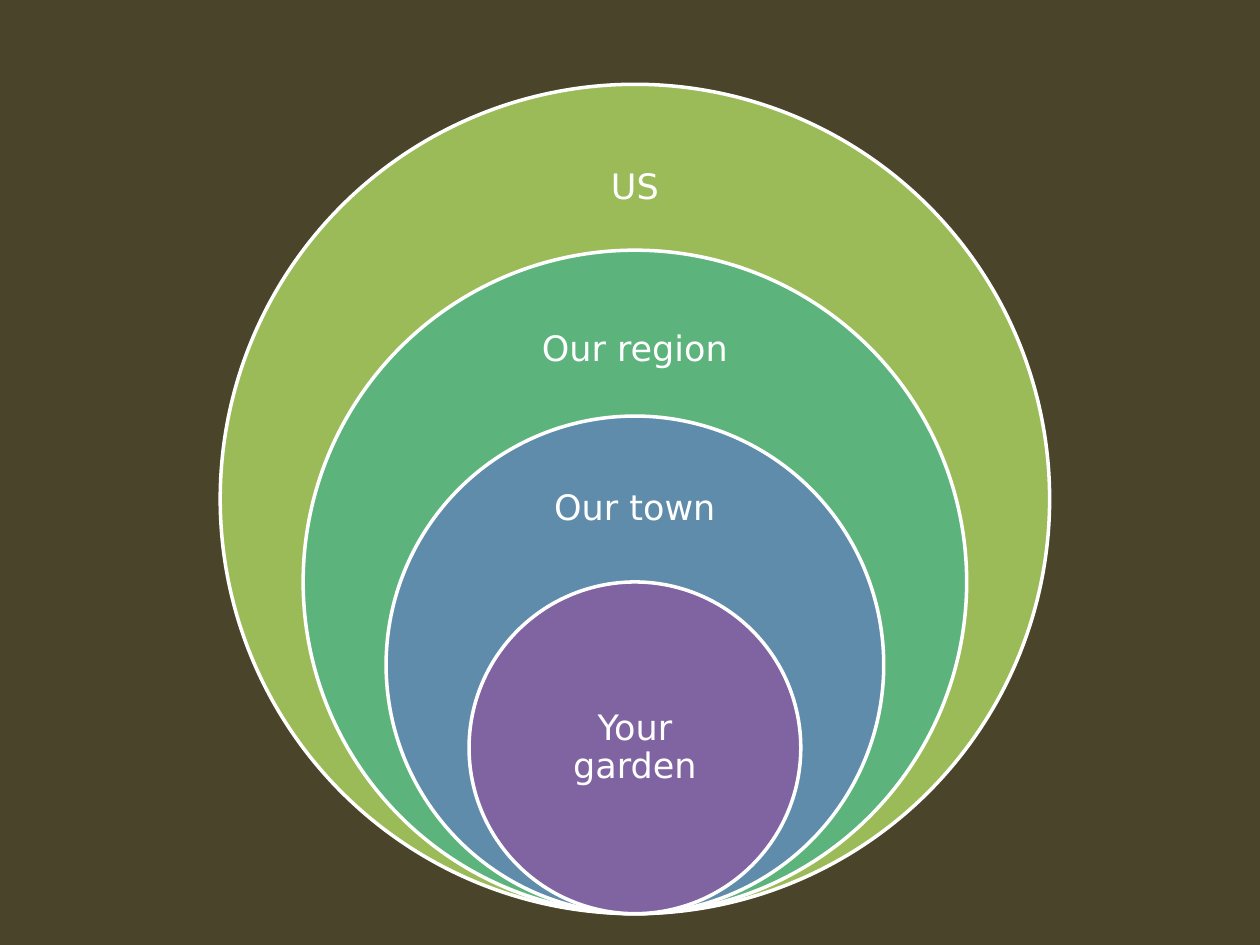
from dataclasses import dataclass

from pptx import Presentation
from pptx.dml.color import RGBColor
from pptx.enum.shapes import MSO_SHAPE as Shape
from pptx.enum.text import MSO_ANCHOR as Anchor, PP_ALIGN as Align
from pptx.util import Cm, Pt

FONT = "DejaVu Sans"
WHITE = "FFFFFF"
BACKGROUND = "4A452A"

# All circles share a centre line and touch at the bottom (cm)
CENTRE_X = 12.8
BOTTOM = 18.42
OUTER_DIAMETER = 16.72
LABEL_WIDTH = 4.7
LABEL_INSET = 0.4


@dataclass
class Ring:
    label: str
    color: str
    scale: float  # share of the outer diameter
    label_top: float  # share of the ring's own diameter
    label_height: float  # share of the ring's own diameter


RINGS = [
    Ring("US", "9BBB59", 1.0, 0.05, 0.15),
    Ring("Our region", "5CB37C", 0.8, 0.06, 0.18),
    Ring("Our town", "608CAB", 0.6, 0.075, 0.225),
    Ring("Your garden", "8064A2", 0.4, 0.25, 0.5),
]


def rgb(value: str) -> RGBColor:
    return RGBColor.from_string(value)


def draw_circle(slide, color: str, top: float, diameter: float) -> None:
    sp = slide.shapes.add_shape(Shape.OVAL, Cm(CENTRE_X - diameter / 2), Cm(top),
                                Cm(diameter), Cm(diameter))
    sp.shadow.inherit = False
    sp.fill.solid()
    sp.fill.fore_color.rgb = rgb(color)
    sp.line.color.rgb = rgb(WHITE)
    sp.line.width = Pt(2)


def draw_label(slide, text: str, top: float, height: float) -> None:
    sp = slide.shapes.add_textbox(Cm(CENTRE_X - LABEL_WIDTH / 2), Cm(top),
                                  Cm(LABEL_WIDTH), Cm(height))
    tf = sp.text_frame
    tf.word_wrap = True
    tf.vertical_anchor = Anchor.MIDDLE
    tf.margin_left = tf.margin_right = Cm(LABEL_INSET)
    tf.margin_top = tf.margin_bottom = Cm(LABEL_INSET)
    tf.text = text
    p = tf.paragraphs[0]
    p.alignment = Align.CENTER
    p.line_spacing = 0.9
    p.space_after = Pt(7)
    r = p.runs[0]
    r.font.name = FONT
    r.font.size = Pt(20)
    r.font.color.rgb = rgb(WHITE)


def draw_ring(slide, ring: Ring) -> None:
    diameter = OUTER_DIAMETER * ring.scale
    top = BOTTOM - diameter
    draw_circle(slide, ring.color, top, diameter)
    draw_label(slide, ring.label, top + ring.label_top * diameter,
               ring.label_height * diameter)


def main() -> None:
    prs = Presentation()
    prs.slide_width, prs.slide_height = Cm(25.4), Cm(19.05)
    slide = prs.slides.add_slide(prs.slide_layouts[6])

    # Background
    fill = slide.background.fill
    fill.solid()
    fill.fore_color.rgb = rgb(BACKGROUND)

    # Nested circles, largest first
    for ring in RINGS:
        draw_ring(slide, ring)

    prs.save("out.pptx")


if __name__ == "__main__":
    main()
